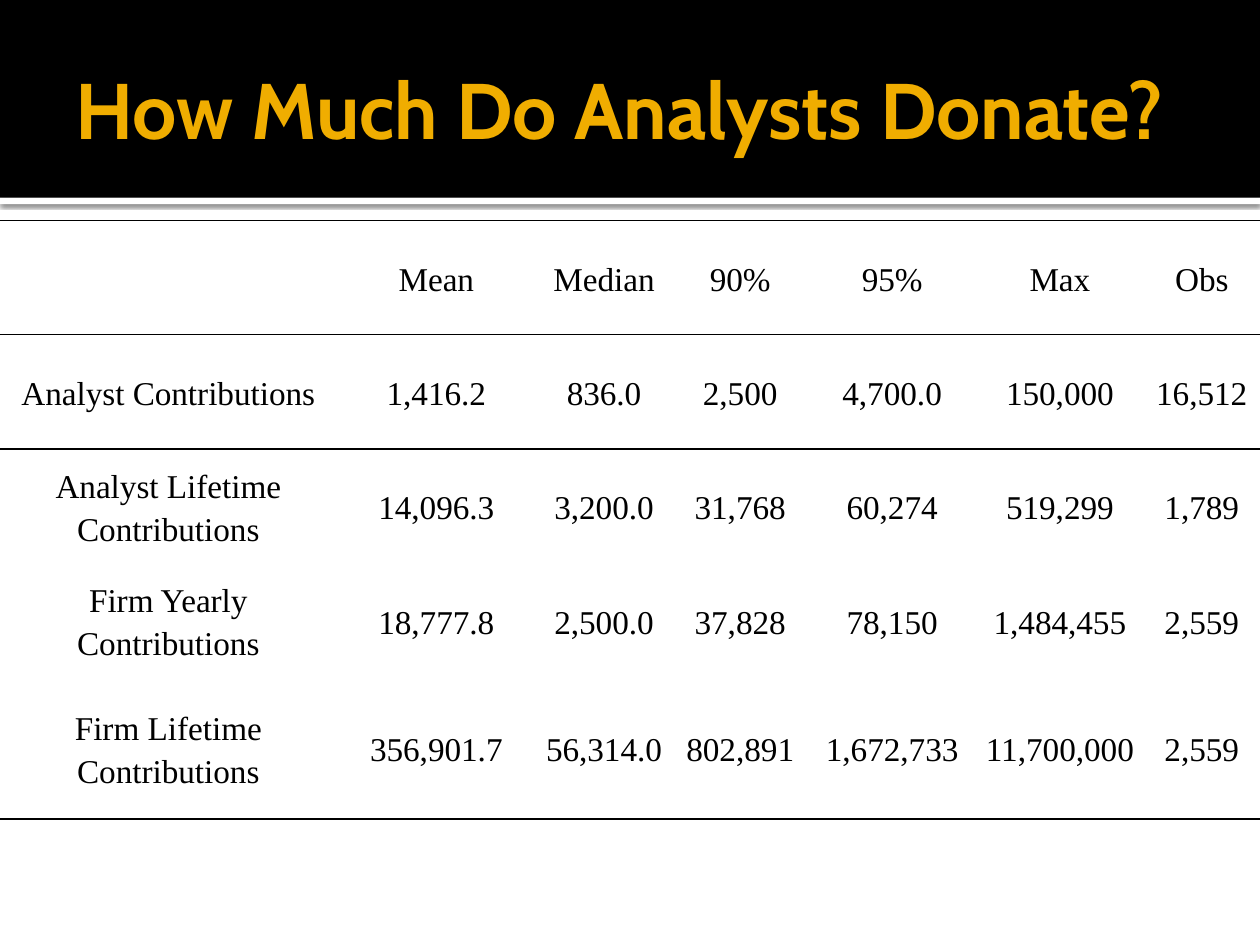
from lxml import etree
from pptx import Presentation
from pptx.dml.color import RGBColor
from pptx.enum import shapes, text
from pptx.oxml import parse_xml
from pptx.oxml.ns import nsdecls, qn
from pptx.util import Inches, Pt

COLORS = {"black": "000000", "white": "FFFFFF", "gold": "F0AD00"}
COLUMN_WIDTHS = [2.67, 1.58, 1.08, 1.08, 1.33, 1.33, 0.92]
ROW_HEIGHTS = [0.91] * 4 + [1.13]
DONATIONS = [
    ["", "Mean", "Median", "90%", "95%", "Max", "Obs"],
    ["Analyst Contributions", "1,416.2", "836.0", "2,500", "4,700.0", "150,000", "16,512"],
    ["Analyst Lifetime Contributions", "14,096.3", "3,200.0", "31,768", "60,274", "519,299", "1,789"],
    ["Firm Yearly Contributions", "18,777.8", "2,500.0", "37,828", "78,150", "1,484,455", "2,559"],
    ["Firm Lifetime Contributions", "356,901.7", "56,314.0", "802,891", "1,672,733", "11,700,000", "2,559"],
]
RULES = {0: ["lnT", "lnB"], 1: ["lnT"], 4: ["lnB"]}  # ruled edges by row
NO_STYLE = "{2D5ABB26-0587-4C30-8999-92F81FD0307C}"


def write(tf, content, size, font, color, bold=False, align=None, spacing=None):
    p = tf.paragraphs[0]
    p.alignment = align
    p.line_spacing = spacing
    r = p.add_run()
    r.text = content
    r.font.size = Pt(size)
    r.font.name = font
    r.font.bold = bold
    r.font.color.rgb = RGBColor.from_string(COLORS[color])


def set_margins(item, left, top, right, bottom):
    item.margin_left, item.margin_top = Inches(left), Inches(top)
    item.margin_right, item.margin_bottom = Inches(right), Inches(bottom)


def add_band(s, left, top, width, height, color):
    sp = s.shapes.add_shape(shapes.MSO_SHAPE.RECTANGLE, Inches(left), Inches(top),
                            Inches(width), Inches(height))
    sp.shadow.inherit = False
    sp.fill.solid()
    sp.fill.fore_color.rgb = RGBColor.from_string(COLORS[color])
    sp.line.fill.background()
    return sp


def add_shadow(sp):
    effects = sp.element.spPr.find(qn("a:effectLst"))
    effects.append(parse_xml(
        f'<a:outerShdw {nsdecls("a")} blurRad="{Pt(2.5)}" dist="{Pt(0.8)}" dir="5400000" '
        f'algn="tl" rotWithShape="0"><a:srgbClr val="{COLORS["black"]}">'
        '<a:alpha val="60000"/></a:srgbClr></a:outerShdw>'))


def add_header(s, left, top, width, height):
    """Place the title on a dark band edged by a shadowed white strip."""
    strip = add_band(s, left, top + height, width, 0.05, "white")
    add_shadow(strip)
    band = add_band(s, left, top, width, height, "black")
    title = s.shapes.title
    for sp in (strip, band):
        title.element.addprevious(sp.element)

    title.left, title.top = Inches(left + 0.5), Inches(top + 0.17)
    title.width, title.height = Inches(width - 1), Inches(height - 0.2)
    tf = title.text_frame
    tf.word_wrap = True
    tf.auto_size = text.MSO_AUTO_SIZE.NONE
    tf.vertical_anchor = text.MSO_ANCHOR.MIDDLE
    set_margins(tf, 0.1, 0.05, 0.05, 0.05)
    write(tf, "How Much Do Analysts Donate?", 45, "Cabin", "gold", bold=True,
          align=text.PP_ALIGN.LEFT)


def rule_cell(cell, edges):
    tc_pr = cell._tc.get_or_add_tcPr()
    for i, edge in enumerate(edges):
        ln = etree.Element(qn(f"a:{edge}"), w=str(Pt(1)))
        fill = etree.SubElement(ln, qn("a:solidFill"))
        etree.SubElement(fill, qn("a:srgbClr"), val=COLORS["black"])
        tc_pr.insert(i, ln)


def add_donation_table(s, left, top, width, height):
    table = s.shapes.add_table(len(DONATIONS), len(COLUMN_WIDTHS), Inches(left), Inches(top),
                               Inches(width), Inches(height)).table
    table.first_row = table.horz_banding = False
    table._tbl.tblPr.find(qn("a:tableStyleId")).text = NO_STYLE
    for column, share in zip(table.columns, COLUMN_WIDTHS):
        column.width = Inches(width * share / sum(COLUMN_WIDTHS))
    for row, share in zip(table.rows, ROW_HEIGHTS):
        row.height = Inches(height * share / sum(ROW_HEIGHTS))

    for i, values in enumerate(DONATIONS):
        for j, value in enumerate(values):
            cell = table.cell(i, j)
            cell.fill.background()
            cell.vertical_anchor = text.MSO_ANCHOR.MIDDLE
            set_margins(cell, 0.07, 0, 0.07, 0)
            if value:
                write(cell.text_frame, value, 19, "Times New Roman", "black",
                      align=text.PP_ALIGN.CENTER, spacing=1.15)
            rule_cell(cell, RULES.get(i, []))


def main():
    prs = Presentation()
    prs.slide_width, prs.slide_height = Inches(10), Inches(7.5)
    s = prs.slides.add_slide(prs.slide_layouts[5])
    add_header(s, 0, 0, 10, 1.57)
    add_donation_table(s, 0, 1.75, 10, 4.75)
    prs.save("out.pptx")


if __name__ == "__main__":
    main()
